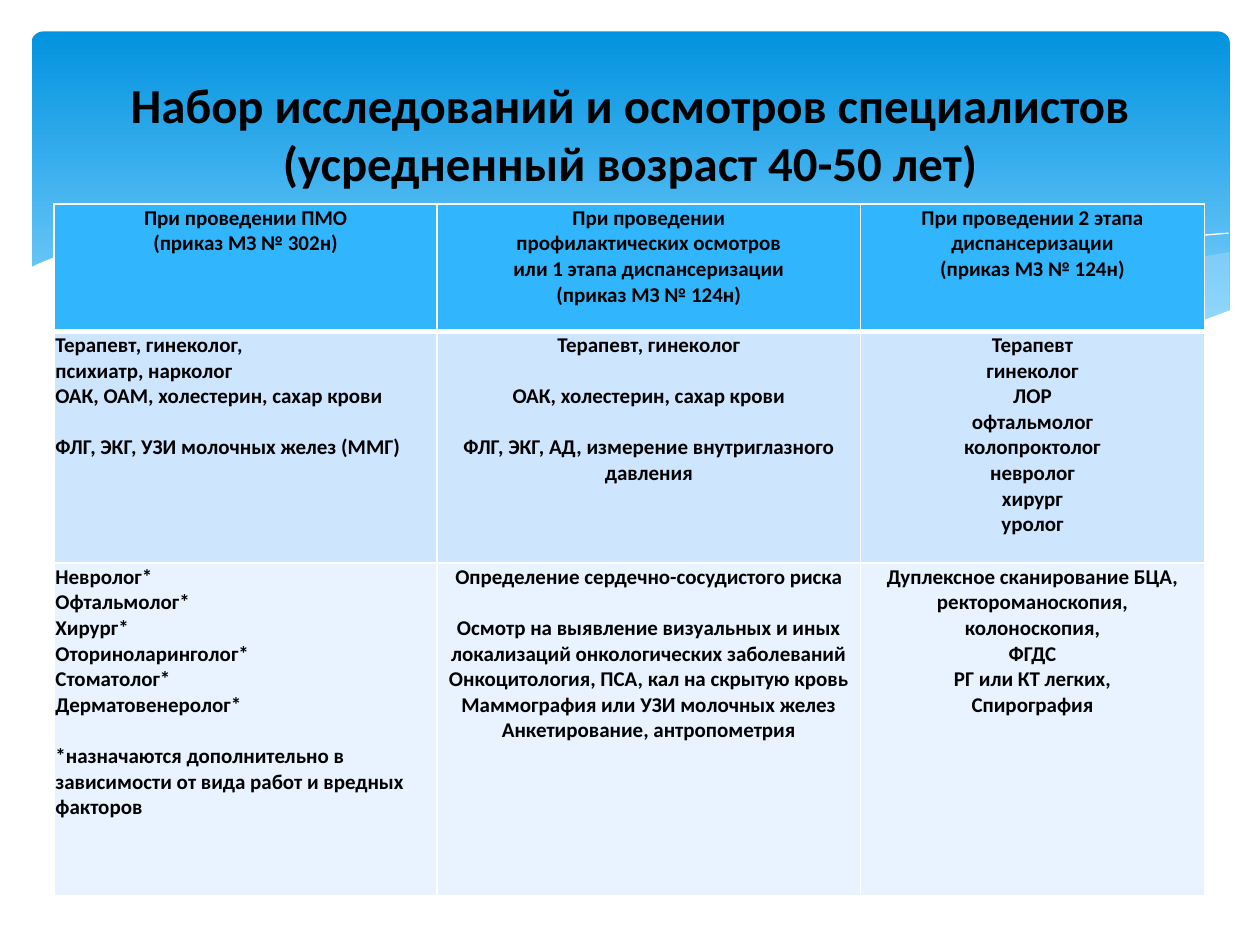
from lxml import etree
from pptx import Presentation
from pptx.dml.color import RGBColor
from pptx.enum.shapes import MSO_SHAPE
from pptx.enum.text import MSO_ANCHOR, PP_ALIGN
from pptx.oxml.ns import qn
from pptx.util import Inches, Pt

ROUNDED = MSO_SHAPE.ROUNDED_RECTANGLE
TOP, MIDDLE = MSO_ANCHOR.TOP, MSO_ANCHOR.MIDDLE
LEFT, CENTER = PP_ALIGN.LEFT, PP_ALIGN.CENTER

GRID = Inches(0.01)
FONT, INK, WHITE = "Calibri", "000000", "FFFFFF"
TITLE = "Набор исследований и осмотров специалистов (усредненный возраст 40-50 лет)"
COLUMNS = (304, 336, 273)
ROWS = (101, 184, 264)
ROW_FILLS = ("31B6FD", "CEE5FE", "E8F3FF")
BLANK_LINE = Pt(14.6)

EXAMS = (
    (
        "При проведении ПМО\n(приказ МЗ № 302н)",
        "При проведении\nпрофилактических осмотров\nили 1 этапа диспансеризации\n"
        "(приказ МЗ № 124н)",
        "При проведении 2 этапа диспансеризации\n(приказ МЗ № 124н)",
    ),
    (
        "Терапевт, гинеколог,\nпсихиатр, нарколог\nОАК, ОАМ, холестерин, сахар крови\n\n"
        "ФЛГ, ЭКГ, УЗИ молочных желез (ММГ)",
        "Терапевт, гинеколог\n\nОАК, холестерин, сахар крови\n\n"
        "ФЛГ, ЭКГ, АД, измерение внутриглазного давления",
        "Терапевт\nгинеколог\nЛОР\nофтальмолог\nколопроктолог\nневролог\nхирург\nуролог",
    ),
    (
        "Невролог*\nОфтальмолог*\nХирург*\nОториноларинголог*\nСтоматолог*\n"
        "Дерматовенеролог*\n\n"
        "*назначаются дополнительно в зависимости от вида работ и вредных факторов",
        "Определение сердечно-сосудистого риска\n\n"
        "Осмотр на выявление визуальных и иных локализаций онкологических заболеваний\n"
        "Онкоцитология, ПСА, кал на скрытую кровь\nМаммография или УЗИ молочных желез\n"
        "Анкетирование, антропометрия",
        "Дуплексное сканирование БЦА,\nректороманоскопия,\nколоноскопия,\nФГДС\n"
        "РГ или КТ легких,\nСпирография",
    ),
)

RIGHT_WAVE = [(976, 200), (935, 207), (861, 223), (779, 242), (706, 257), (661, 265),
              (705, 271), (757, 276), (803, 278), (854, 276), (897, 270), (935, 262),
              (963, 252), (976, 247)]
MIDDLE_WAVE = [(893, 273), (837, 265), (775, 254), (706, 240), (629, 222), (584, 211),
               (541, 203), (489, 195), (442, 189), (399, 186), (361, 185), (313, 188),
               (286, 191), (342, 199), (404, 211), (449, 222), (530, 240), (601, 255),
               (665, 266), (722, 274), (773, 277), (818, 278), (857, 277)]
LONG_CREST = [(309, 195), (344, 190), (387, 187), (433, 187), (489, 190), (556, 197),
              (636, 208), (695, 219), (760, 233), (831, 251), (907, 272)]
RIGHT_CREST = [(613, 257), (672, 241), (748, 223), (806, 210), (866, 199), (910, 192),
               (951, 187), (975, 185)]
WHITE_WAVE = [(977, 246), (950, 256), (920, 265), (887, 271), (850, 275), (809, 277),
              (761, 275), (708, 270), (648, 262), (579, 250), (503, 233), (447, 220),
              (391, 207), (340, 197), (292, 190), (250, 186), (211, 184), (177, 184),
              (146, 185), (119, 187), (95, 191), (76, 195), (59, 199), (46, 203),
              (36, 207), (29, 210), (23, 213), (23, 329), (977, 329)]


def color(value):
    return RGBColor.from_string(value)


def grid(*steps):
    return [step * GRID for step in steps]


def add_banner(slide):
    banner = slide.shapes.add_shape(ROUNDED, *grid(25, 25, 951, 270))
    banner.shadow.inherit = False
    banner.adjustments[0] = 0.034
    banner.line.fill.background()
    banner.fill.gradient()
    banner.fill.gradient_angle = 270
    stops = banner.fill.gradient_stops
    for stop, position, shade in zip(stops, (0, 0.9), ("0293E0", "83D3FE")):
        stop.position = position
        stop.color.rgb = color(shade)


def draw_path(slide, points, closed):
    builder = slide.shapes.build_freeform(*points[0], scale=GRID)
    builder.add_line_segments(points[1:], close=closed)
    curve = builder.convert_to_shape()
    curve.shadow.inherit = False
    return curve


def add_wave(slide, points, shade, opacity=100):
    wave = draw_path(slide, points, True)
    wave.line.fill.background()
    wave.fill.solid()
    wave.fill.fore_color.rgb = color(shade)
    if opacity < 100:
        tint = wave.fill._xPr.find(qn("a:solidFill"))[0]
        etree.SubElement(tint, qn("a:alpha"), val=str(opacity * 1000))


def add_crest(slide, points):
    crest = draw_path(slide, points, False)
    crest.fill.background()
    crest.line.color.rgb = color(WHITE)
    crest.line.width = Pt(0)


def style(paragraph, size, alignment):
    paragraph.alignment = alignment
    paragraph.font.name = FONT
    paragraph.font.size = Pt(size)
    paragraph.font.bold = True
    paragraph.font.color.rgb = color(INK)


def add_title(slide):
    heading = slide.shapes.add_textbox(*grid(50, 37, 900, 137)).text_frame
    heading.word_wrap = True
    heading.vertical_anchor = MIDDLE
    heading.text = TITLE
    style(heading.paragraphs[0], 27.9, CENTER)


def set_borders(cell, bottom):
    properties = cell._tc.get_or_add_tcPr()
    for side, points in (("L", 1), ("R", 1), ("T", 1), ("B", bottom)):
        border = etree.SubElement(properties, qn(f"a:ln{side}"), w=str(Pt(points)))
        paint = etree.SubElement(border, qn("a:solidFill"))
        etree.SubElement(paint, qn("a:srgbClr"), val=WHITE)


def fill_cell(cell, text, shade, alignment, bottom):
    set_borders(cell, bottom)
    cell.fill.solid()
    cell.fill.fore_color.rgb = color(shade)
    cell.vertical_anchor = TOP
    cell.margin_left = cell.margin_right = cell.margin_top = GRID
    cell.margin_bottom = 0
    groups = [group.split("\n") for group in text.split("\n\n")]
    cell.text = "\n".join(line for group in groups for line in group)
    paragraphs = iter(cell.text_frame.paragraphs)
    for number, group in enumerate(groups):
        for position in range(len(group)):
            paragraph = next(paragraphs)
            style(paragraph, 12, alignment)
            if number and position == 0:
                paragraph.space_before = BLANK_LINE


def add_exam_table(slide):
    area = grid(43, 162, sum(COLUMNS), sum(ROWS))
    table = slide.shapes.add_table(len(ROWS), len(COLUMNS), *area).table
    for column, width in zip(table.columns, COLUMNS):
        column.width = width * GRID
    for r, (height, texts, shade) in enumerate(zip(ROWS, EXAMS, ROW_FILLS)):
        table.rows[r].height = height * GRID
        for c, text in enumerate(texts):
            alignment = LEFT if r and c == 0 else CENTER
            fill_cell(table.cell(r, c), text, shade, alignment, 1 if r else 3)


def main():
    deck = Presentation()
    deck.slide_width, deck.slide_height = grid(1000, 750)
    slide = deck.slides.add_slide(deck.slide_layouts[6])
    add_banner(slide)
    add_wave(slide, RIGHT_WAVE, "C6E7FC", 29)
    add_wave(slide, MIDDLE_WAVE, "C6E7FC", 40)
    add_crest(slide, LONG_CREST)
    add_crest(slide, RIGHT_CREST)
    add_wave(slide, WHITE_WAVE, WHITE)
    add_exam_table(slide)
    add_title(slide)
    deck.save("out.pptx")


if __name__ == "__main__":
    main()
